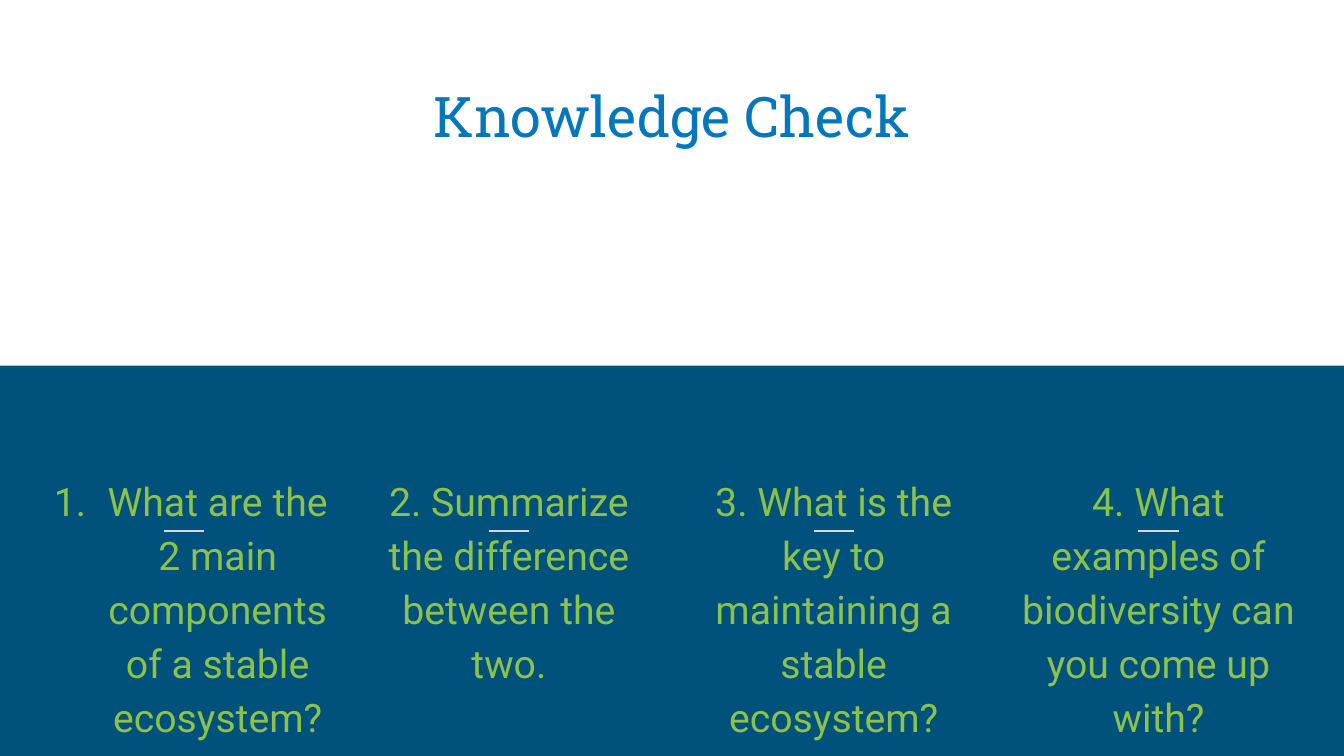
from lxml.etree import SubElement
from pptx import Presentation
from pptx.dml.color import RGBColor
from pptx.enum.shapes import MSO_CONNECTOR, MSO_SHAPE
from pptx.enum.text import MSO_ANCHOR as Anchor, MSO_AUTO_SIZE as AutoSize, PP_ALIGN as Align
from pptx.oxml.ns import qn
from pptx.util import Inches, Pt

NAVY = RGBColor(0x00, 0x51, 0x7C)
WHITE = RGBColor(0xFF, 0xFF, 0xFF)
BLUE = RGBColor(0x02, 0x77, 0xBD)
GREEN = RGBColor(0x8B, 0xC3, 0x4A)
GREY = RGBColor(0xCF, 0xD8, 0xDC)

COMPARISON_LAYOUT = 4  # a title and four body placeholders
COLUMN_STEP = 7.25 / 3
QUESTIONS = [
    "What are the 2 main components of a stable ecosystem?",
    "2. Summarize the difference between the two.",
    "3. What is the key to maintaining a stable ecosystem?",
    "4. What examples of biodiversity can you come up with?",
]


def add_top_band(slide):
    """Add the white band behind everything else."""
    band = slide.shapes.add_shape(
        MSO_SHAPE.RECTANGLE, 0, 0, Inches(10.02), Inches(2.72))
    band.shadow.inherit = False
    band.fill.solid()
    band.fill.fore_color.rgb = WHITE
    band.line.fill.background()
    slide.shapes[0].element.addprevious(band.element)


def fill_placeholder(shape, box, text, font_name, size, color, anchor):
    """Place and format a placeholder; return its only paragraph."""
    shape.left, shape.top, shape.width, shape.height = map(Inches, box)
    frame = shape.text_frame
    frame.word_wrap = True
    frame.auto_size = AutoSize.NONE
    frame.vertical_anchor = anchor
    frame.margin_left = frame.margin_right = Inches(0.1)
    frame.margin_top = frame.margin_bottom = Inches(0.1)
    paragraph = frame.paragraphs[0]
    paragraph.alignment = Align.CENTER
    paragraph.space_before = Pt(0)
    run = paragraph.add_run()
    run.text = text
    run.font.name = font_name
    run.font.size = Pt(size)
    run.font.bold = False
    run.font.color.rgb = color
    return paragraph


def set_numbering(paragraph, numbered):
    properties = paragraph._p.get_or_add_pPr()
    margin, indent = (0.5, -0.4) if numbered else (0, 0)
    properties.set("marL", str(Inches(margin)))
    properties.set("indent", str(Inches(indent)))
    if numbered:
        bullet_color = SubElement(properties, qn("a:buClr"))
        SubElement(bullet_color, qn("a:srgbClr"), val=str(GREEN))
        SubElement(properties, qn("a:buFont"), typeface="Roboto")
        SubElement(properties, qn("a:buAutoNum"), type="arabicPeriod")
    else:
        SubElement(properties, qn("a:buNone"))


def add_question(shape, left, text, numbered):
    paragraph = fill_placeholder(
        shape, (left, 3.4, 2.38, 0.48), text, "Roboto", 21, GREEN, Anchor.TOP)
    paragraph.line_spacing = 1.15
    paragraph.space_after = Pt(0 if numbered else 16)
    set_numbering(paragraph, numbered)


def add_short_rule(slide, left):
    rule = slide.shapes.add_connector(
        MSO_CONNECTOR.STRAIGHT,
        Inches(left), Inches(3.95), Inches(left + 0.3), Inches(3.95))
    rule.line.color.rgb = GREY
    rule.line.width = Pt(0.75)
    SubElement(rule.element.spPr, qn("a:effectLst"))


def main():
    presentation = Presentation()
    presentation.slide_width = Inches(10)
    presentation.slide_height = Inches(10 * 9 / 16)
    slide = presentation.slides.add_slide(
        presentation.slide_layouts[COMPARISON_LAYOUT])
    slide.background.fill.solid()
    slide.background.fill.fore_color.rgb = NAVY

    title, *bodies = slide.placeholders
    add_top_band(slide)
    fill_placeholder(title, (0.34, 0.41, 9.32, 0.8), "Knowledge Check",
                     "Roboto Slab", 30, BLUE, Anchor.BOTTOM)
    for column, (body, question) in enumerate(zip(bodies, QUESTIONS)):
        offset = column * COLUMN_STEP
        add_question(body, 0.18 + offset, question, numbered=column == 0)
        add_short_rule(slide, 1.22 + offset)

    presentation.save("out.pptx")


if __name__ == "__main__":
    main()
